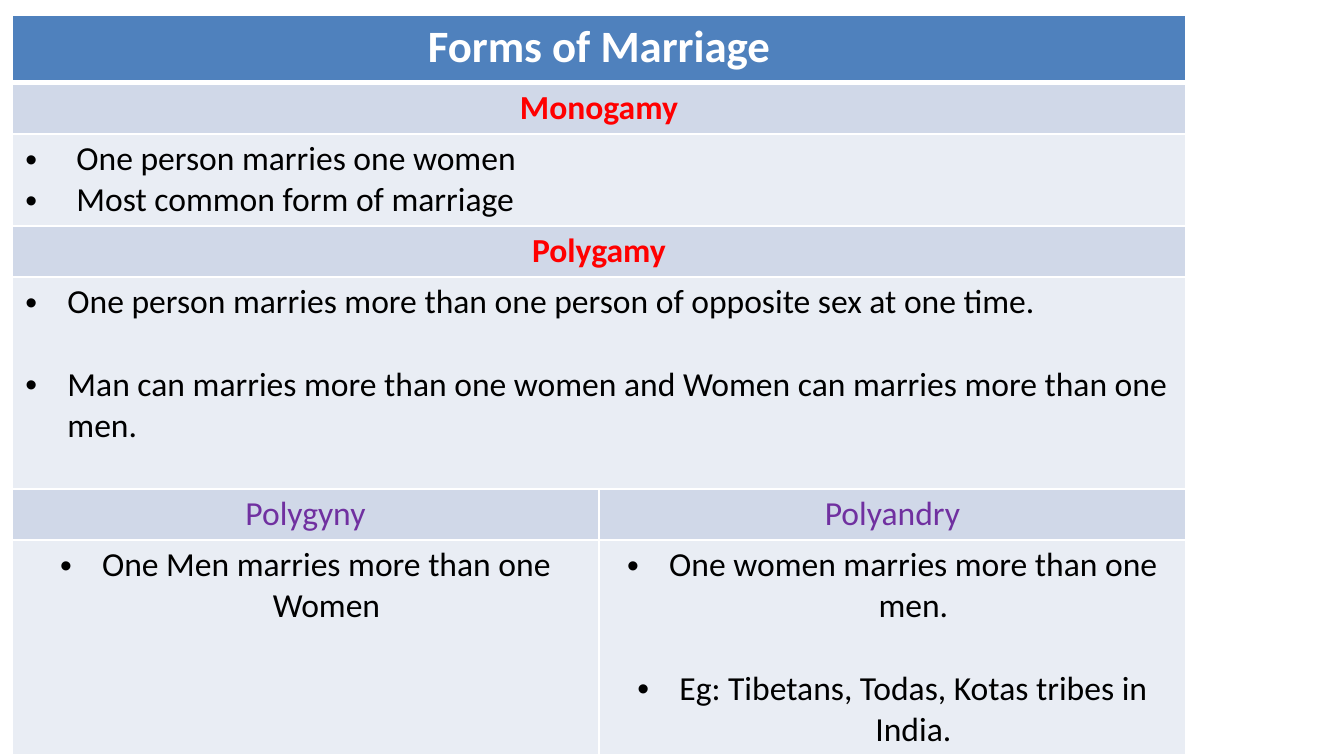
from lxml.etree import SubElement as Sub
from pptx import Presentation
from pptx.dml.color import RGBColor as RGB
from pptx.enum.text import PP_ALIGN as Align
from pptx.oxml.ns import qn
from pptx.util import Emu, Pt

# Content: one entry per row; "gap" is the space before later paragraphs in pt
ROWS = [
    dict(kind="title", high=68, cells=[["Forms of Marriage"]]),
    dict(kind="head", high=51, cells=[["Monogamy"]]),
    dict(kind="list", high=91, indent=51, cells=[
        ["One person marries one women", "Most common form of marriage"]]),
    dict(kind="head", high=51, cells=[["Polygamy"]]),
    dict(kind="list", high=212, indent=42, gap=22, cells=[
        ["One person marries more than one person of opposite sex at one time.",
         "Man can marries more than one women and Women can marries more than one men."]]),
    dict(kind="sub", high=51, cells=[["Polygyny"], ["Polyandry"]]),
    dict(kind="pair", high=212, indent=42, gap=22, cells=[
        ["One Men marries more than one Women"],
        ["One women marries more than one men.",
         "Eg: Tibetans, Todas, Kotas tribes in India."]]),
]
HEX = dict(blue="4F81BD", band="D0D8E8", pale="E9EDF4", white="FFFFFF",
           red="FF0000", purple="7030A0", black="000000")
# kind: fill, text colour, size, bold, alignment
LOOKS = dict(
    title=("blue", "white", 24, True, Align.CENTER),
    head=("band", "red", 18, True, Align.CENTER),
    list=("pale", "black", 18, False, Align.LEFT),
    sub=("band", "purple", 18, False, Align.CENTER),
    pair=("pale", "black", 18, False, Align.CENTER),
)
LEFT, TOP, WIDE, COLS = 12, 15, 1174, 2


def px(n):
    return Emu(round(n * 914400 / 134.4))


def color(name):
    return RGB.from_string(HEX[name])


def edge(cell, foot):
    props = cell._tc.get_or_add_tcPr()
    for side, width in (("L", 1), ("R", 1), ("T", 1), ("B", foot)):
        line = Sub(props, qn(f"a:ln{side}"), w=str(Pt(width)))
        Sub(Sub(line, qn("a:solidFill")), qn("a:srgbClr"), val=HEX["white"])


def bullet(para, indent):
    props = para._p.get_or_add_pPr()
    props.set("marL", str(px(indent)))
    props.set("indent", str(-px(indent)))
    Sub(props, qn("a:buFont"), typeface="Arial")
    Sub(props, qn("a:buChar"), char="•")


def write(cell, texts, row):
    fill, ink, size, bold, align = LOOKS[row["kind"]]
    cell.fill.solid()
    cell.fill.fore_color.rgb = color(fill)
    cell.margin_top = cell.margin_bottom = px(5)
    frame = cell.text_frame
    for i, text in enumerate(texts):
        para = frame.add_paragraph() if i else frame.paragraphs[0]
        para.text = text
        para.alignment = align
        if "indent" in row:
            bullet(para, row["indent"])
        if i and "gap" in row:
            para.space_before = Pt(row["gap"])
        font = para.font
        font.name, font.size, font.bold = "Calibri", Pt(size), bold
        font.color.rgb = color(ink)


# Slide
deck = Presentation()
deck.slide_width, deck.slide_height = px(1344), px(756)
slide = deck.slides.add_slide(deck.slide_layouts[6])

# Table
high = sum(row["high"] for row in ROWS)
table = slide.shapes.add_table(
    len(ROWS), COLS, px(LEFT), px(TOP), px(WIDE), px(high)).table
for col in table.columns:
    col.width = px(WIDE / COLS)
for r, row in enumerate(ROWS):
    table.rows[r].height = px(row["high"])
    for c in range(COLS):
        edge(table.cell(r, c), 3 if row["kind"] == "title" else 1)
    if len(row["cells"]) == 1:
        table.cell(r, 0).merge(table.cell(r, COLS - 1))
    for c, texts in enumerate(row["cells"]):
        write(table.cell(r, c), texts, row)

deck.save("out.pptx")
